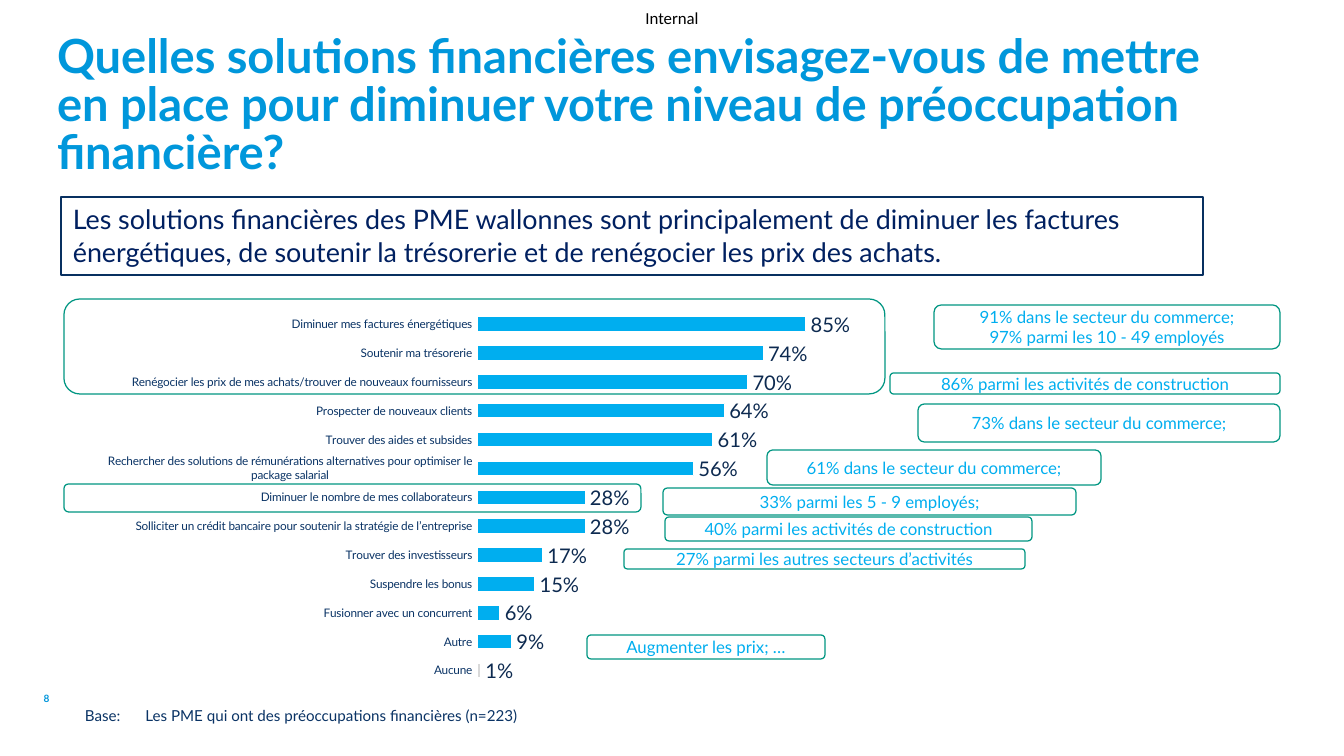
from dataclasses import dataclass

import pptx
import pptx.chart.data
import pptx.dml.color
import pptx.enum.chart
import pptx.enum.shapes
import pptx.enum.text
import pptx.oxml
import pptx.oxml.ns
import pptx.util

PX = 914400 / 121
ALIGN = pptx.enum.text.PP_ALIGN
ANCHOR = pptx.enum.text.MSO_ANCHOR
SHAPE = pptx.enum.shapes.MSO_SHAPE


@dataclass(frozen=True)
class Theme:
    font: str = "Lato"
    label_font: str = "Calibri"
    title: str = "0097DB"
    page: str = "0096DC"
    summary: str = "002060"
    summary_line: str = "083060"
    note: str = "0A3365"
    value: str = "0D2A50"
    accent: str = "00AEEF"
    muted: str = "D9D9D9"
    outline: str = "009682"
    black: str = "000000"
    white: str = "FFFFFF"
    title_size: int = 28
    summary_size: int = 16
    value_size: int = 12
    callout_size: int = 10
    note_size: int = 9
    axis_size: int = 7
    page_size: int = 6
    hairline: float = 0.75


@dataclass(frozen=True)
class Box:
    left: int
    top: int
    width: int
    height: int

    def emu(self) -> list[int]:
        return [round(v * PX) for v in (self.left, self.top, self.width, self.height)]


@dataclass(frozen=True)
class Callout:
    box: Box
    text: str


THEME = Theme()

SOLUTIONS = {
    "Diminuer mes factures énergétiques": 85,
    "Soutenir ma trésorerie": 74,
    "Renégocier les prix de mes achats/trouver de nouveaux fournisseurs": 70,
    "Prospecter de nouveaux clients": 64,
    "Trouver des aides et subsides": 61,
    "Rechercher des solutions de rémunérations alternatives pour optimiser le package salarial": 56,
    "Diminuer le nombre de mes collaborateurs": 28,
    "Solliciter un crédit bancaire pour soutenir la stratégie de l’entreprise": 28,
    "Trouver des investisseurs": 17,
    "Suspendre les bonus": 15,
    "Fusionner avec un concurrent": 6,
    "Autre": 9,
    "Aucune": 1,
}

CALLOUTS = [
    Callout(Box(934, 305, 346, 44),
            "91% dans le secteur du commerce;\n97% parmi les 10 - 49 employés"),
    Callout(Box(890, 373, 390, 21), "86% parmi les activités de construction"),
    Callout(Box(918, 404, 362, 38), "73% dans le secteur du commerce;"),
    Callout(Box(767, 450, 334, 35), "61% dans le secteur du commerce;"),
    Callout(Box(663, 488, 413, 27), "33% parmi les 5 - 9 employés;"),
    Callout(Box(665, 517, 367, 24), "40% parmi les activités de construction"),
    Callout(Box(624, 549, 401, 20), "27% parmi les autres secteurs d’activités"),
    Callout(Box(587, 635, 238, 24), "Augmenter les prix; …"),
]

HIGHLIGHTS = [Box(64, 299, 821, 95), Box(64, 484, 577, 28)]


def rgb(color: str) -> pptx.dml.color.RGBColor:
    return pptx.dml.color.RGBColor.from_string(color)


def style_font(font, size: int, color: str, name: str = THEME.font, bold: bool = False) -> None:
    font.size, font.name, font.bold = pptx.util.Pt(size), name, bold
    font.color.rgb = rgb(color)


def write(shape, text: str, *, size: int, color: str, font: str = THEME.font,
          bold: bool = False, align=ALIGN.LEFT, anchor=ANCHOR.TOP,
          spacing=None, inset: bool = True, wrap: bool = True) -> None:
    """Fill a shape with one paragraph per line of text."""
    frame = shape.text_frame
    frame.word_wrap, frame.vertical_anchor = wrap, anchor
    if not inset:
        frame.margin_left = frame.margin_right = frame.margin_top = frame.margin_bottom = 0
    for index, line in enumerate(text.split("\n")):
        paragraph = frame.add_paragraph() if index else frame.paragraphs[0]
        paragraph.alignment, paragraph.line_spacing = align, spacing
        run = paragraph.add_run()
        run.text = line
        style_font(run.font, size, color, font, bold)


def add_text(slide, box: Box, text: str, **style) -> None:
    write(slide.shapes.add_textbox(*box.emu()), text, **style)


def add_outline(slide, box: Box, kind=SHAPE.ROUNDED_RECTANGLE, color: str = THEME.outline):
    outline = slide.shapes.add_shape(kind, *box.emu())
    outline.shadow.inherit = False
    outline.fill.background()
    outline.line.color.rgb = rgb(color)
    outline.line.width = pptx.util.Pt(THEME.hairline)
    return outline


def place_plot(chart, x: float, y: float, w: float, h: float) -> None:
    """Fix the inner plot area, in fractions of the chart."""
    area = chart._chartSpace.chart.plotArea
    for old in area.findall(pptx.oxml.ns.qn("c:layout")):
        area.remove(old)
    values = "".join(f'<c:{tag} val="{value}"/>' for tag, value in zip("xywh", (x, y, w, h)))
    area.insert(0, pptx.oxml.parse_xml(
        f'<c:layout {pptx.oxml.ns.nsdecls("c")}><c:manualLayout><c:layoutTarget val="inner"/>'
        f'<c:xMode val="edge"/><c:yMode val="edge"/>{values}</c:manualLayout></c:layout>'))


def add_solutions_chart(slide, box: Box) -> None:
    data = pptx.chart.data.CategoryChartData()
    data.categories = list(SOLUTIONS)
    data.add_series("Series 1", list(SOLUTIONS.values()))
    chart = slide.shapes.add_chart(
        pptx.enum.chart.XL_CHART_TYPE.BAR_CLUSTERED, *box.emu(), data).chart
    chart.has_legend = chart.has_title = False
    style_font(chart.font, THEME.value_size, THEME.value)
    place_plot(chart, 0.49, 0.03, 0.51, 0.96)

    answers = chart.category_axis
    answers.reverse_order = True
    answers.major_tick_mark = pptx.enum.chart.XL_TICK_MARK.NONE
    answers.format.line.fill.background()
    style_font(answers.tick_labels.font, THEME.axis_size, THEME.note)
    percent = chart.value_axis
    percent.minimum_scale, percent.maximum_scale = 0, 100
    percent.has_major_gridlines = percent.visible = False

    plot = chart.plots[0]
    plot.gap_width, plot.vary_by_categories = 95, False
    bars = plot.series[0]
    none_bar = bars.points[len(SOLUTIONS) - 1]
    for part, color in ((bars, THEME.accent), (none_bar, THEME.muted)):
        part.format.fill.solid()
        part.format.fill.fore_color.rgb = rgb(color)
        part.format.line.color.rgb = rgb(THEME.white)
        part.format.line.width = pptx.util.Pt(THEME.hairline)
    labels = bars.data_labels
    labels.show_value = True
    labels.number_format, labels.number_format_is_linked = r"0\%", False
    labels.position = pptx.enum.chart.XL_LABEL_POSITION.OUTSIDE_END
    style_font(labels.font, THEME.value_size, THEME.value)


def main() -> None:
    deck = pptx.Presentation()
    deck.slide_width, deck.slide_height = round(1344 * PX), round(756 * PX)
    slide = deck.slides.add_slide(deck.slide_layouts[6])

    add_text(slide, Box(627, 0, 90, 35), "Internal", size=THEME.callout_size,
             color=THEME.black, font=THEME.label_font, align=ALIGN.CENTER,
             anchor=ANCHOR.MIDDLE, inset=False)
    add_text(slide, Box(0, 679, 93, 40), "8", size=THEME.page_size, color=THEME.page,
             bold=True, align=ALIGN.CENTER, anchor=ANCHOR.MIDDLE)
    add_solutions_chart(slide, Box(105, 298, 759, 391))
    add_text(slide, Box(57, 35, 1153, 145),
             "Quelles solutions financières envisagez-vous de mettre en place pour "
             "diminuer votre niveau de préoccupation financière?",
             size=THEME.title_size, color=THEME.title, bold=True, spacing=0.85, inset=False)
    add_text(slide, Box(85, 711, 1096, 21),
             "Base:\tLes PME qui ont des préoccupations financières (n=223)",
             size=THEME.note_size, color=THEME.note, spacing=pptx.util.Pt(8), inset=False)
    summary = add_outline(slide, Box(61, 197, 1142, 78), SHAPE.RECTANGLE, THEME.summary_line)
    write(summary,
          "Les solutions financières des PME wallonnes sont principalement de diminuer les "
          "factures énergétiques, de soutenir la trésorerie et de renégocier les prix des achats.",
          size=THEME.summary_size, color=THEME.summary)
    for callout in CALLOUTS:
        write(add_outline(slide, callout.box), callout.text, size=THEME.callout_size,
              color=THEME.accent, align=ALIGN.CENTER, anchor=ANCHOR.MIDDLE)
    for highlight in HIGHLIGHTS:
        add_outline(slide, highlight)

    deck.save("out.pptx")


if __name__ == "__main__":
    main()
